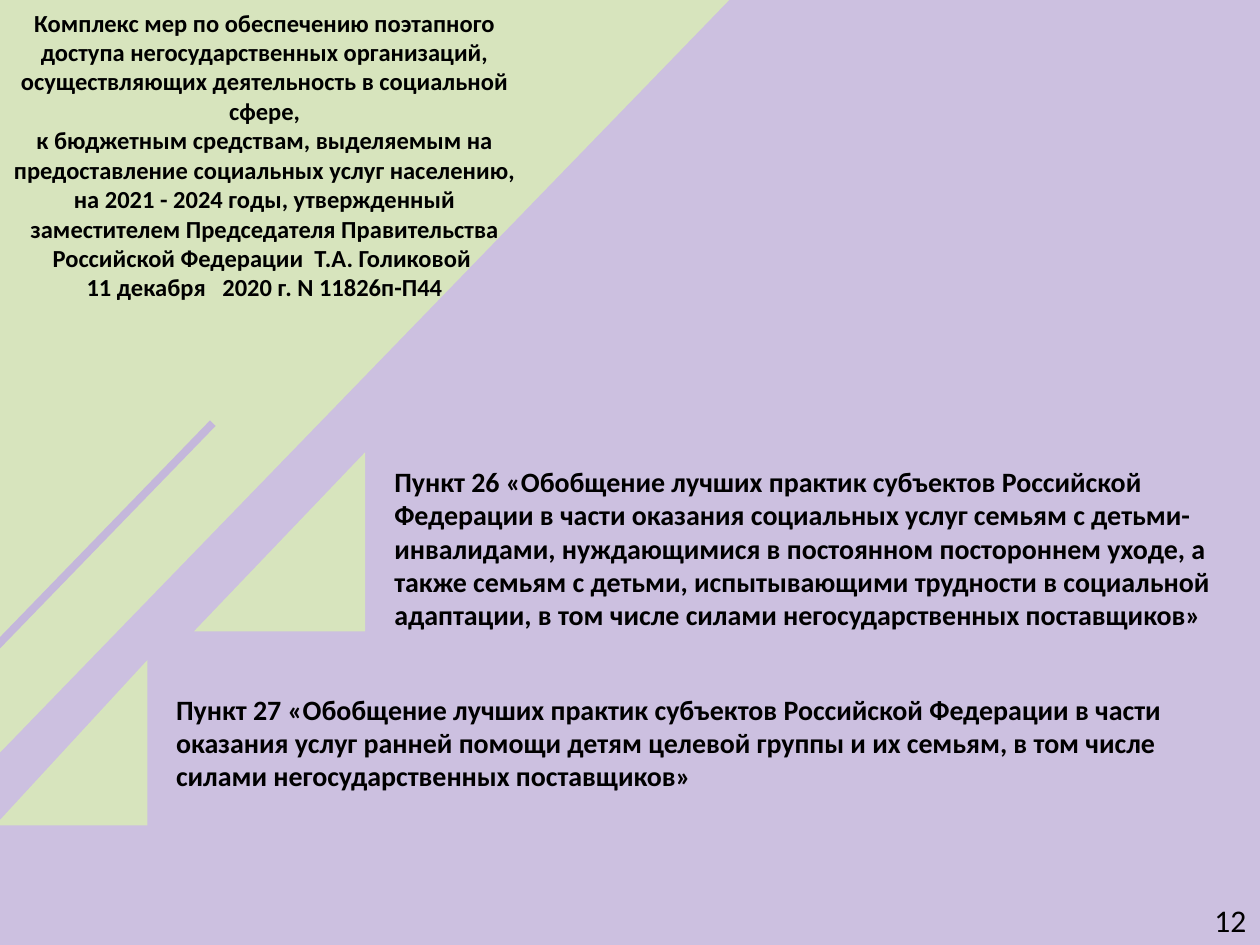
from lxml.etree import SubElement
from pptx import Presentation
from pptx.dml.color import RGBColor
from pptx.enum.shapes import MSO_CONNECTOR, MSO_SHAPE
from pptx.enum.text import MSO_AUTO_SIZE, PP_ALIGN
from pptx.oxml.ns import qn
from pptx.util import Cm, Pt

FONT = "Calibri"
COLORS = {"background": "CCC0E0", "stripe": "C4B7DB", "green": "D7E4BD", "text": "000000"}

TITLE = [
    "Комплекс мер по обеспечению поэтапного доступа негосударственных организаций, "
    "осуществляющих деятельность в социальной сфере,",
    "к бюджетным средствам, выделяемым на предоставление социальных услуг населению, "
    "на 2021 - 2024 годы, утвержденный заместителем Председателя Правительства "
    "Российской Федерации  Т.А. Голиковой ",
    "11 декабря   2020 г. N 11826п-П44",
]
# Each item: triangle and text areas as left, top, width, height in cm
ITEMS = [
    {
        "triangle": (-0.1, 13.31, 3.07, 3.33),
        "area": (3.3, 13.84, 21.21, 2.29),
        "lines": [
            "Пункт 27 «Обобщение лучших практик субъектов Российской Федерации в части "
            "оказания услуг ранней помощи детям целевой группы и их семьям, в том числе "
            "силами негосударственных поставщиков»",
        ],
    },
    {
        "triangle": (3.91, 9.12, 3.45, 3.61),
        "area": (7.7, 9.25, 18.42, 3.63),
        "lines": [
            "Пункт 26 «Обобщение лучших практик субъектов Российской",
            "Федерации в части оказания социальных услуг семьям с детьми-инвалидами, "
            "нуждающимися в постоянном постороннем уходе, а также семьям с детьми, "
            "испытывающими трудности в социальной адаптации, в том числе силами "
            "негосударственных поставщиков»",
        ],
    },
]
PAGE_NUMBER = "12"


def color(name):
    return RGBColor.from_string(COLORS[name])


def add_triangle(slide, area, apex, rotation=0):
    """Add a green triangle; apex is the tip's place along the width, 0 to 1."""
    triangle = slide.shapes.add_shape(MSO_SHAPE.ISOSCELES_TRIANGLE, *map(Cm, area))
    triangle.adjustments[0] = apex
    triangle.rotation = rotation
    triangle.shadow.inherit = False
    triangle.fill.solid()
    triangle.fill.fore_color.rgb = color("green")
    triangle.line.fill.background()


def add_text(slide, area, lines, size, bold=True, align=PP_ALIGN.LEFT, spacing=None, wrap=True):
    box = slide.shapes.add_textbox(*map(Cm, area))
    frame = box.text_frame
    frame.word_wrap = wrap
    frame.auto_size = MSO_AUTO_SIZE.SHAPE_TO_FIT_TEXT
    frame.text = "\n".join(lines)
    for para in frame.paragraphs:
        para.alignment = align
        para.line_spacing = spacing
        for span in para.runs:
            span.font.name = FONT
            span.font.size = Pt(size)
            span.font.bold = bold
            span.font.color.rgb = color("text")


def add_stripe(slide, start, end):
    stripe = slide.shapes.add_connector(MSO_CONNECTOR.STRAIGHT, *map(Cm, start + end))
    stripe.line.color.rgb = color("stripe")
    stripe.line.width = Pt(4.5)
    SubElement(stripe.element.spPr, qn("a:effectLst"))


def main():
    deck = Presentation()
    deck.slide_width, deck.slide_height = Cm(25.4), Cm(19.05)
    page = deck.slides.add_slide(deck.slide_layouts[6])
    page.background.fill.solid()
    page.background.fill.fore_color.rgb = color("background")

    add_triangle(page, (-7.14, -1.57, 21.29, 10.77), apex=0.51, rotation=314.1)
    add_stripe(page, (-0.1, 13.06), (4.29, 8.53))
    add_text(page, (-0.1, 0.03, 10.87, 6.25), TITLE, 14, align=PP_ALIGN.CENTER)
    for item in ITEMS:
        add_triangle(page, item["triangle"], apex=1)
        add_text(page, item["area"], item["lines"], 16, spacing=Pt(19))
    add_text(page, (24.23, 18.03, 1.17, 1.02), [PAGE_NUMBER], 18, bold=False, wrap=False)
    deck.save("out.pptx")


if __name__ == "__main__":
    main()
